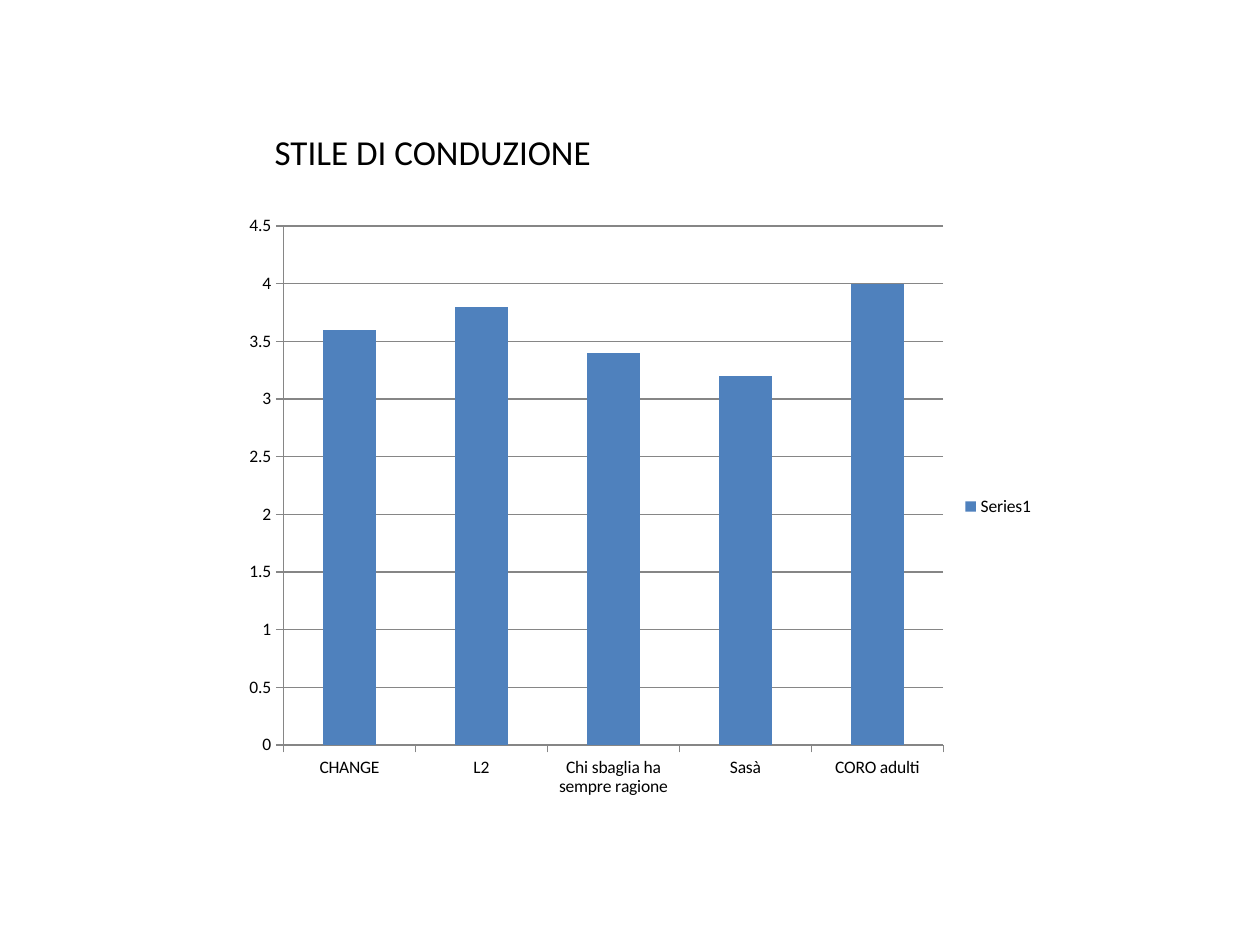
from pptx import Presentation
from pptx.chart.data import CategoryChartData
from pptx.dml.color import RGBColor
from pptx.enum import chart as ch, text
from pptx.util import Inches, Pt

FONT = "Calibri"
BLACK = RGBColor(0x00, 0x00, 0x00)
BAR_BLUE = RGBColor(0x4F, 0x81, 0xBD)
AXIS_GREY = RGBColor(0x86, 0x86, 0x86)

RATINGS = {
    "CHANGE": 3.6,
    "L2": 3.8,
    "Chi sbaglia ha sempre ragione": 3.4,
    "Sasà": 3.2,
    "CORO adulti": 4,
}


def style_font(font, size):
    """Apply the slide's font at the given size."""
    font.name = FONT
    font.size = Pt(size)
    font.bold = False
    font.color.rgb = BLACK


def style_line(line):
    """Give an axis or grid line its thin grey stroke."""
    line.color.rgb = AXIS_GREY
    line.width = Pt(0.75)


def add_heading(slide, left, top, width, height):
    """Place the heading in a one-cell table."""
    table = slide.shapes.add_table(1, 1, left, top, width, height).table
    table.first_row = False
    table.horz_banding = False
    cell = table.cell(0, 0)
    cell.fill.background()
    cell.vertical_anchor = text.MSO_ANCHOR.BOTTOM
    cell.margin_left = cell.margin_right = cell.margin_top = Inches(0.01)
    cell.margin_bottom = 0
    heading = cell.text_frame.paragraphs[0].add_run()
    heading.text = "STILE DI CONDUZIONE"
    style_font(heading.font, 20)


def add_ratings_chart(slide, left, top, width, height):
    """Place the column chart of ratings by group."""
    ratings = CategoryChartData()
    ratings.categories = list(RATINGS)
    ratings.add_series("Series1", list(RATINGS.values()))
    chart = slide.shapes.add_chart(
        ch.XL_CHART_TYPE.COLUMN_CLUSTERED, left, top, width, height, ratings
    ).chart
    style_font(chart.font, 10)
    chart.has_title = False
    chart.has_legend = True
    chart.legend.position = ch.XL_LEGEND_POSITION.RIGHT
    chart.legend.include_in_layout = False

    plot = chart.plots[0]
    plot.gap_width = 150
    plot.vary_by_categories = False
    bars = plot.series[0].format.fill
    bars.solid()
    bars.fore_color.rgb = BAR_BLUE

    for axis in (chart.category_axis, chart.value_axis):
        axis.major_tick_mark = ch.XL_TICK_MARK.OUTSIDE
        axis.minor_tick_mark = ch.XL_TICK_MARK.NONE
        style_line(axis.format.line)
    scale = chart.value_axis
    scale.minimum_scale = 0
    scale.maximum_scale = 4.5
    scale.major_unit = 0.5
    scale.has_major_gridlines = True
    style_line(scale.major_gridlines.format.line)


def main():
    """Build and save the slide."""
    deck = Presentation()
    deck.slide_width, deck.slide_height = Inches(10), Inches(7.5)
    slide = deck.slides.add_slide(deck.slide_layouts[6])
    add_ratings_chart(slide, Inches(1.85), Inches(1.62), Inches(6.46), Inches(4.8))
    add_heading(slide, Inches(2.17), Inches(0.21), Inches(5.28), Inches(1.18))
    deck.save("out.pptx")


if __name__ == "__main__":
    main()
